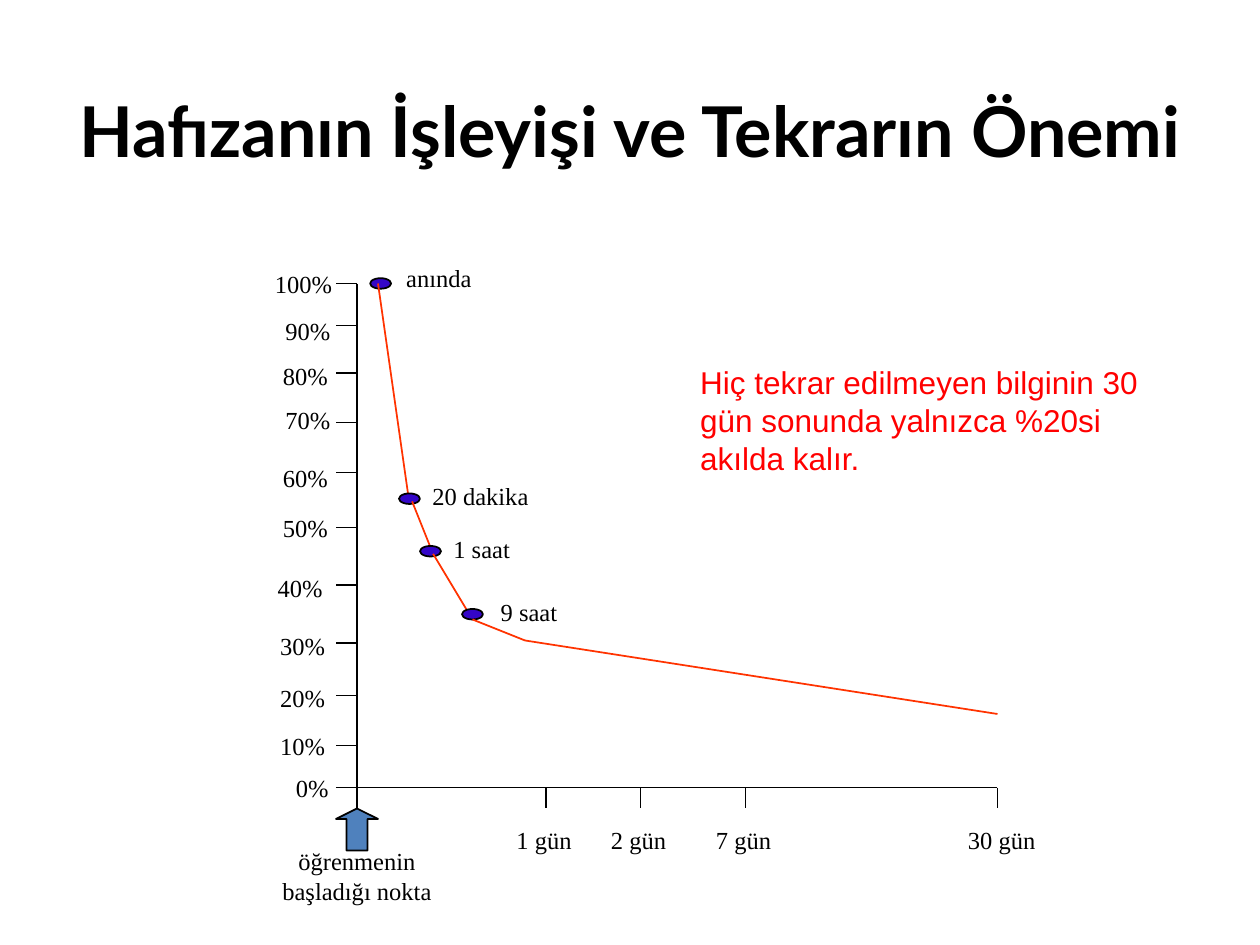
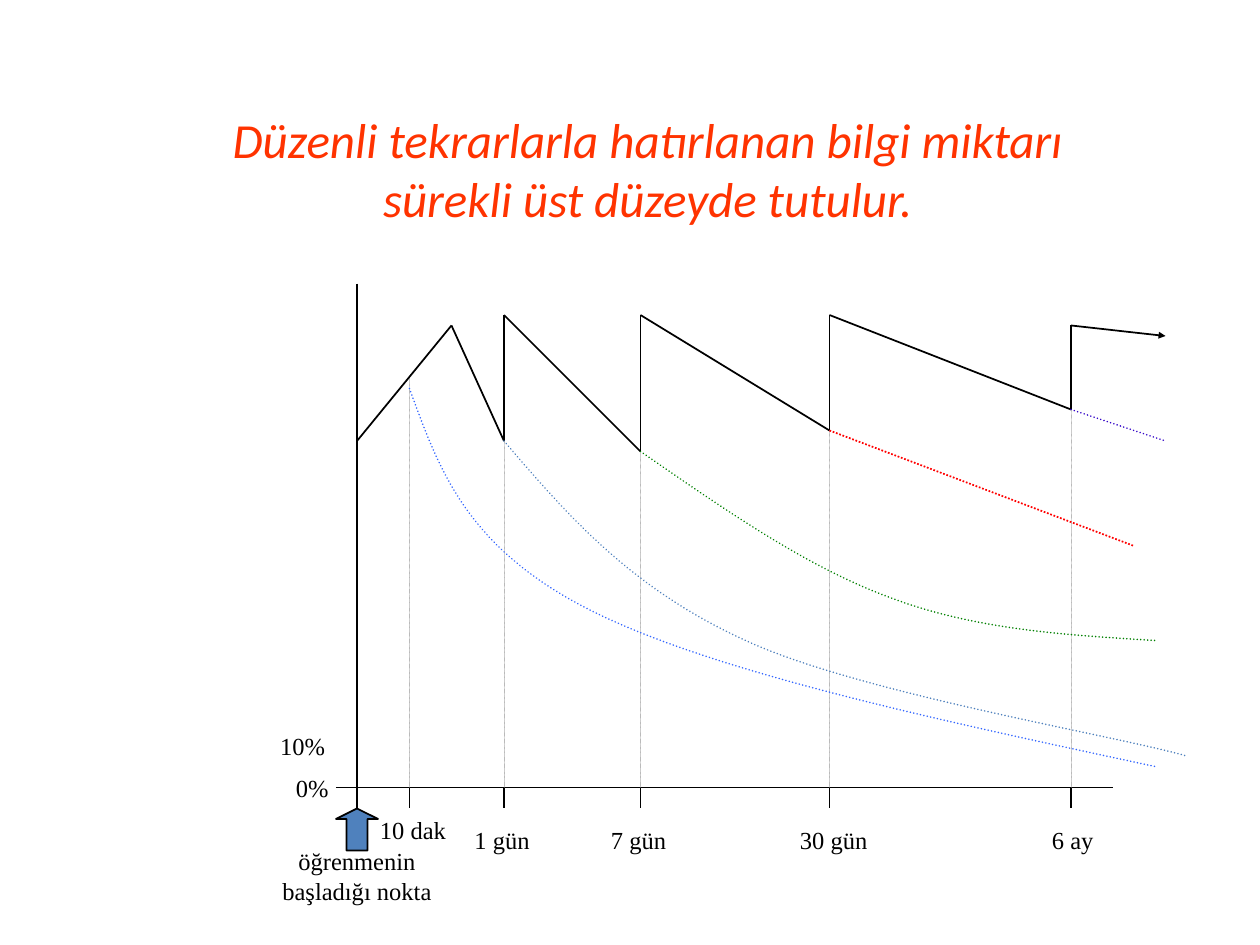
import itertools
from dataclasses import dataclass

import lxml.etree
import pptx
import pptx.dml.color
import pptx.enum.dml
import pptx.enum.shapes
import pptx.enum.text
import pptx.oxml.ns
import pptx.shapes.autoshape
import pptx.shapes.connector
import pptx.slide
import pptx.text.text
import pptx.util
from pptx.dml.color import RGBColor
from pptx.util import Inches

BLACK = RGBColor(0x00, 0x00, 0x00)
RED = RGBColor(0xFF, 0x00, 0x00)
ORANGE_RED = RGBColor(0xFF, 0x33, 0x00)
INDIGO = RGBColor(0x34, 0x06, 0xC8)
STEEL_BLUE = RGBColor(0x4F, 0x81, 0xBD)
BRIGHT_BLUE = RGBColor(0x33, 0x66, 0xFF)
GREEN = RGBColor(0x00, 0x80, 0x00)
GRAY = RGBColor(0x96, 0x96, 0x96)

GRID_PER_INCH = 48
AXIS_X, AXIS_Y, AXIS_TOP = 2.83, 6.25, 2.25
TICK_LEFT, TICK_BOTTOM = 2.67, 6.42
LABEL_HEIGHT = 0.33
DOT_WIDTH, DOT_HEIGHT = 0.17, 0.08

Point = tuple[float, float]
Box = tuple[float, float, float, float]


@dataclass(frozen=True)
class Label:
    text: str
    left: float
    top: float
    width: float = 0.67


@dataclass(frozen=True)
class DayMark:
    x: float
    label: Label


@dataclass(frozen=True)
class PercentMark:
    y: float
    label: Label


@dataclass(frozen=True)
class RecallPoint:
    dot: Point
    start: Point
    end: Point
    label: Label


@dataclass(frozen=True)
class ForgettingCurve:
    color: RGBColor
    points: tuple[Point, ...]


ZERO_PERCENT = PercentMark(AXIS_Y, Label("0%", 2.25, 6.08, 0.5))
TEN_PERCENT = PercentMark(5.92, Label("10%", 2.12, 5.75))
PERCENT_MARKS = [
    TEN_PERCENT,
    PercentMark(5.52, Label("20%", 2.12, 5.38)),
    PercentMark(5.1, Label("30%", 2.12, 4.96)),
    PercentMark(4.65, Label("40%", 2.1, 4.5)),
    PercentMark(4.19, Label("50%", 2.15, 4.02)),
    PercentMark(3.75, Label("60%", 2.15, 3.62)),
    PercentMark(3.35, Label("70%", 2.17, 3.17)),
    PercentMark(2.96, Label("80%", 2.15, 2.81)),
    PercentMark(2.58, Label("90%", 2.17, 2.46)),
    PercentMark(AXIS_TOP, Label("100%", 2.08, 2.08)),
]

FORGETTING_DAYS = [
    DayMark(4.33, Label("1 gün", 4, 6.5)),
    DayMark(5.08, Label("2 gün", 4.75, 6.5)),
    DayMark(5.92, Label("7 gün", 5.58, 6.5, 0.83)),
    DayMark(7.92, Label("30 gün", 7.58, 6.5, 0.75)),
]
RECALL_POINTS = [
    RecallPoint((2.94, 2.21), (3, 2.25), (3.25, 4), Label("anında", 3.12, 2.04, 1.33)),
    RecallPoint((3.17, 3.92), (3.27, 3.98), (3.44, 4.4), Label("20 dakika", 3.33, 3.77, 1.58)),
    RecallPoint((3.33, 4.33), (3.44, 4.4), (3.75, 4.92), Label("1 saat", 3.5, 4.19, 1.58)),
    RecallPoint((3.67, 4.83), (3.75, 4.92), (4.17, 5.08), Label("9 saat", 3.88, 4.69, 0.85)),
]

REVIEW_DAYS = [
    DayMark(3.25, Label("10 dak", 2.92, 6.42, 0.75)),
    DayMark(4, Label("1 gün", 3.67, 6.5)),
    DayMark(5.08, Label("7 gün", 4.75, 6.5, 0.83)),
    DayMark(6.58, Label("30 gün", 6.25, 6.5, 0.75)),
    DayMark(8.5, Label("6 ay", 8.25, 6.5, 0.75)),
]
GUIDE_TOPS = [3, 3.5, 3.58, 3.42, 3.25]
REVIEW_POINTS = [
    (AXIS_X, 3.5), (3.58, 2.58), (4, 3.5), (4, 2.5), (5.08, 3.58), (5.08, 2.5),
    (6.58, 3.42), (6.58, 2.5), (8.5, 3.25), (8.5, 2.58),
]
FORGETTING_CURVES = [
    ForgettingCurve(BRIGHT_BLUE, (
        (3.25, 3.08), (3.47, 3.71), (3.68, 4.33), (4.67, 4.83),
        (5.65, 5.33), (7.41, 5.71), (9.17, 6.08))),
    ForgettingCurve(STEEL_BLUE, (
        (4, 3.5), (4.51, 4.08), (5.01, 4.67), (5.92, 5.08),
        (6.82, 5.5), (8.83, 5.83), (9.42, 6))),
    ForgettingCurve(GREEN, (
        (5.08, 3.58), (5.74, 4.04), (6.4, 4.5), (7.08, 4.75),
        (7.76, 5), (8.47, 5.04), (9.17, 5.08))),
]


def on_grid(values: tuple[float, ...]) -> list[pptx.util.Length]:
    return [Inches(round(value * GRID_PER_INCH) / GRID_PER_INCH) for value in values]


def write_text(
    frame: pptx.text.text.TextFrame, text: str, *, font: str, size: float,
    color: RGBColor = BLACK, bold: bool = False, italic: bool = False, centered: bool = False,
) -> None:
    frame.word_wrap = True
    para = frame.paragraphs[0]
    align = pptx.enum.text.PP_ALIGN
    para.alignment = align.CENTER if centered else align.LEFT
    span = para.add_run()
    span.text = text
    span.font.name = font
    span.font.size = pptx.util.Pt(size)
    span.font.color.rgb = color
    span.font.bold = bold
    span.font.italic = italic


def add_text(page: pptx.slide.Slide, text: str, place: Box, **text_format) -> None:
    box = page.shapes.add_textbox(*on_grid(place))
    box.text_frame.auto_size = pptx.enum.text.MSO_AUTO_SIZE.SHAPE_TO_FIT_TEXT
    write_text(box.text_frame, text, **text_format)


def add_label(page: pptx.slide.Slide, label: Label) -> None:
    place = (label.left, label.top, label.width, LABEL_HEIGHT)
    add_text(page, label.text, place, font="Times New Roman", size=14)


def add_page(
    deck: pptx.presentation.Presentation, title: str, place: Box, **text_format
) -> pptx.slide.Slide:
    page = deck.slides.add_slide(deck.slide_layouts.get_by_name("Title Only"))
    box = page.shapes.title
    box.left, box.top, box.width, box.height = map(Inches, place)
    box.text_frame.vertical_anchor = pptx.enum.text.MSO_ANCHOR.MIDDLE
    box.text_frame.auto_size = pptx.enum.text.MSO_AUTO_SIZE.NONE
    write_text(box.text_frame, title, centered=True, **text_format)
    return page


def style_line(
    shape: pptx.shapes.autoshape.Shape | pptx.shapes.connector.Connector,
    color: RGBColor, width: float = 1, dotted: bool = False, round_cap: bool = False,
) -> None:
    shape.line.color.rgb = color
    shape.line.width = pptx.util.Pt(width)
    if dotted:
        shape.line.dash_style = pptx.enum.dml.MSO_LINE.ROUND_DOT
    if round_cap:
        shape.get_or_add_ln().set("cap", "rnd")


def add_line(
    page: pptx.slide.Slide, start: Point, end: Point, color: RGBColor = BLACK,
    arrow: bool = False, **line_format,
) -> None:
    line = page.shapes.add_connector(
        pptx.enum.shapes.MSO_CONNECTOR.STRAIGHT, *on_grid(start + end))
    style_line(line, color, **line_format)
    name = pptx.oxml.ns.qn
    if arrow:
        lxml.etree.SubElement(
            line.get_or_add_ln(), name("a:tailEnd"), type="triangle", w="sm", len="sm")
    lxml.etree.SubElement(line._element.spPr, name("a:effectLst"))


def add_figure(
    page: pptx.slide.Slide, kind: pptx.enum.shapes.MSO_SHAPE, place: Box, fill: RGBColor
) -> pptx.shapes.autoshape.Shape:
    figure = page.shapes.add_shape(kind, *on_grid(place))
    figure.shadow.inherit = False
    figure.fill.solid()
    figure.fill.fore_color.rgb = fill
    style_line(figure, BLACK)
    return figure


def add_curve(page: pptx.slide.Slide, curve: ForgettingCurve) -> None:
    start, *others = map(on_grid, curve.points)
    builder = page.shapes.build_freeform(*start)
    builder.add_line_segments(others, close=False)
    shape = builder.convert_to_shape()
    name = pptx.oxml.ns.qn
    segments = list(shape._element.spPr.iter(name("a:lnTo")))
    for first in range(0, len(segments), 3):
        outline = segments[first].getparent()
        bend = lxml.etree.SubElement(outline, name("a:cubicBezTo"))
        for segment in segments[first:first + 3]:
            bend.append(segment[0])
            outline.remove(segment)
    shape.shadow.inherit = False
    shape.fill.background()
    style_line(shape, curve.color, dotted=True, round_cap=True)


def add_axes(page: pptx.slide.Slide, right: float, days: list[DayMark]) -> None:
    add_line(page, (AXIS_X, AXIS_TOP), (AXIS_X, TICK_BOTTOM))
    add_line(page, (TICK_LEFT, AXIS_Y), (right, AXIS_Y))
    for day in days:
        add_line(page, (day.x, AXIS_Y), (day.x, TICK_BOTTOM))
        add_label(page, day.label)
    add_label(page, ZERO_PERCENT.label)
    arrow = add_figure(page, pptx.enum.shapes.MSO_SHAPE.UP_ARROW,
                       (TICK_LEFT, TICK_BOTTOM, 0.33, 0.33), STEEL_BLUE)
    arrow.adjustments[0] = 0.5
    arrow.adjustments[1] = 0.25
    add_text(page, "öğrenmenin başladığı nokta", (1.92, 6.67, 1.83, 0.57),
             font="Times New Roman", size=14, centered=True)


def build_forgetting_page(deck: pptx.presentation.Presentation) -> None:
    page = add_page(deck, "Hafızanın İşleyişi ve Tekrarın Önemi", (0, -0.04, 10, 2.14),
                    font="Lato", size=40, bold=True)
    add_axes(page, 7.92, FORGETTING_DAYS)
    for mark in PERCENT_MARKS:
        add_line(page, (AXIS_X, mark.y), (TICK_LEFT, mark.y))
        add_label(page, mark.label)
    for point in RECALL_POINTS:
        add_figure(page, pptx.enum.shapes.MSO_SHAPE.OVAL,
                   point.dot + (DOT_WIDTH, DOT_HEIGHT), INDIGO)
        add_line(page, point.start, point.end, ORANGE_RED)
        add_label(page, point.label)
    add_line(page, RECALL_POINTS[-1].end, (7.92, 5.67), ORANGE_RED)
    add_text(page, "Hiç tekrar edilmeyen bilginin 30 gün sonunda yalnızca %20si akılda kalır.",
             (5.46, 2.83, 3.95, 1.01), font="Arial", size=18, color=RED)


def build_review_page(deck: pptx.presentation.Presentation) -> None:
    page = add_page(
        deck, "Düzenli tekrarlarla hatırlanan bilgi miktarı sürekli üst düzeyde tutulur.",
        (1.39, -0.18, 7.5, 3.03), font="Calibri", size=28, color=ORANGE_RED, italic=True)
    add_axes(page, 8.83, REVIEW_DAYS)
    add_label(page, TEN_PERCENT.label)
    for day, top in zip(REVIEW_DAYS, GUIDE_TOPS):
        add_line(page, (day.x, AXIS_Y), (day.x, top), GRAY,
                 width=0.25, dotted=True, round_cap=True)
    for start, end in itertools.pairwise(REVIEW_POINTS):
        add_line(page, start, end)
    add_line(page, REVIEW_POINTS[-1], (9.25, 2.67), arrow=True)
    for curve in FORGETTING_CURVES:
        add_curve(page, curve)
    add_line(page, (6.58, 3.42), (9, 4.33), RED, dotted=True)
    add_line(page, (8.5, 3.25), (9.25, 3.5), INDIGO, dotted=True, round_cap=True)


def main() -> None:
    deck = pptx.Presentation()
    deck.slide_width, deck.slide_height = Inches(10), Inches(7.5)
    build_forgetting_page(deck)
    build_review_page(deck)
    deck.save("out.pptx")


if __name__ == "__main__":
    main()
